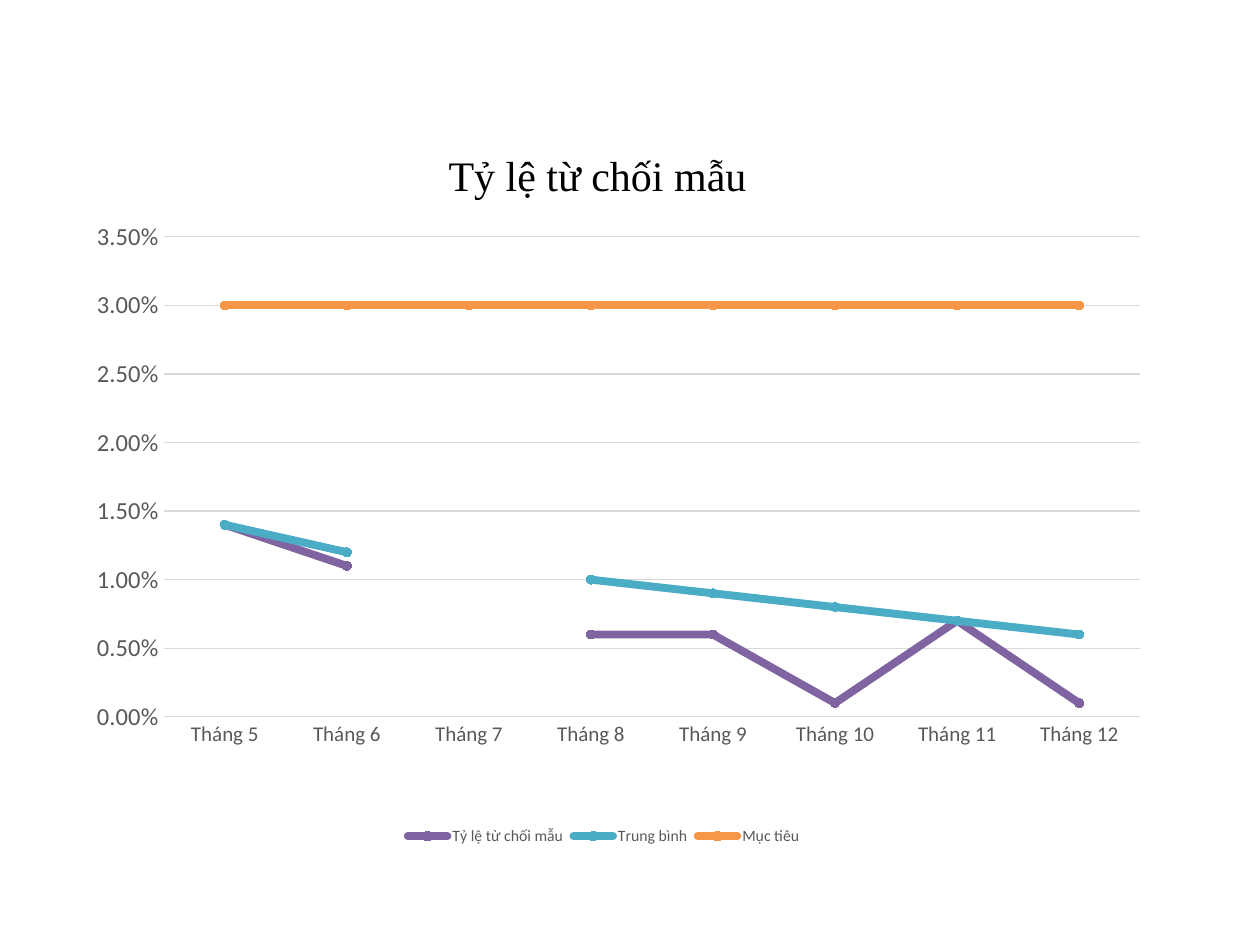
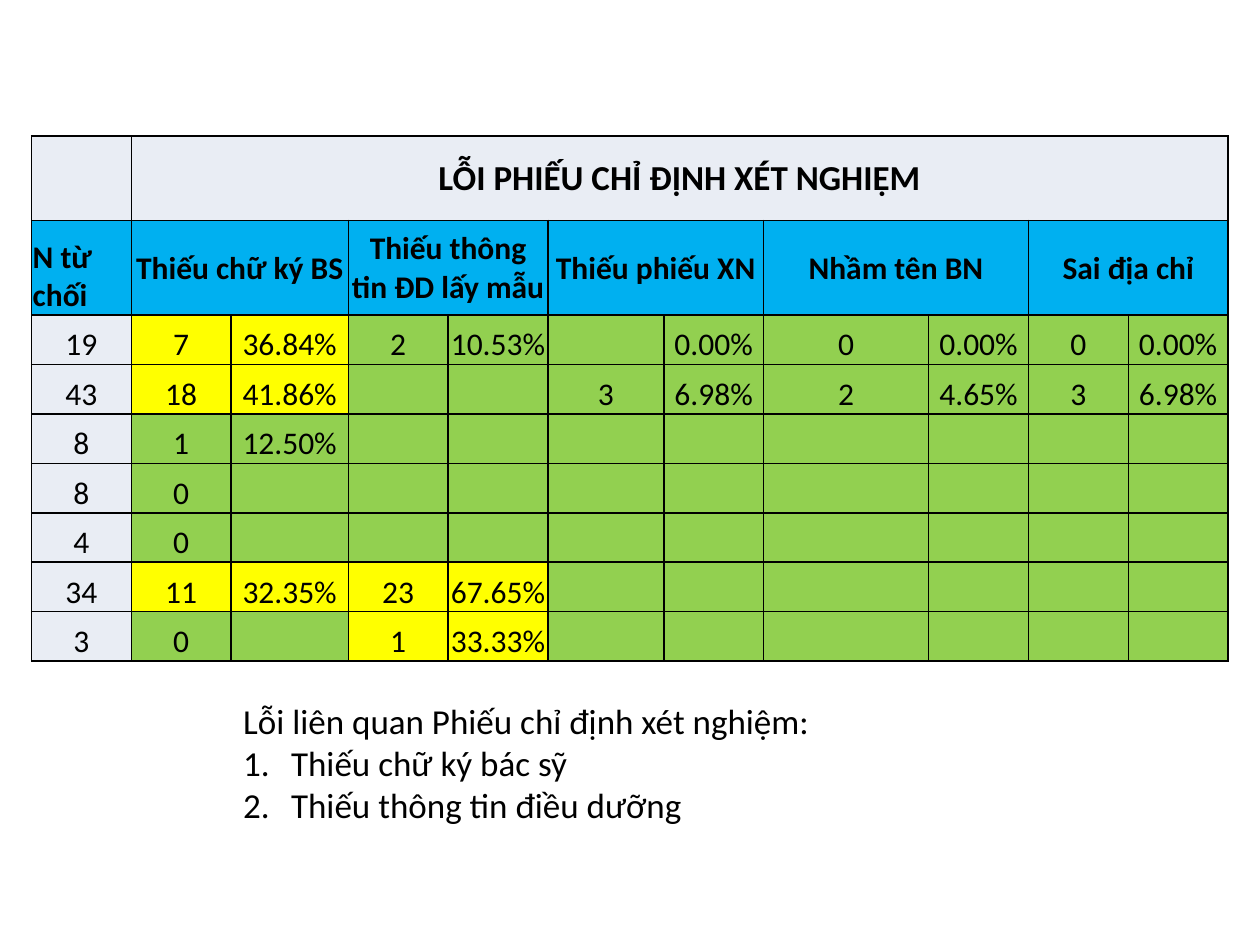
from dataclasses import dataclass
from typing import NamedTuple, Optional

from lxml.etree import SubElement
from pptx import Presentation
from pptx.chart.data import CategoryChartData
from pptx.dml.color import RGBColor
from pptx.enum.chart import XL_CHART_TYPE, XL_LEGEND_POSITION, XL_MARKER_STYLE, XL_TICK_MARK
from pptx.enum.text import MSO_ANCHOR, MSO_AUTO_SIZE, PP_ALIGN
from pptx.oxml.ns import qn
from pptx.util import Inches, Pt

LINE_MARKERS = XL_CHART_TYPE.LINE_MARKERS
LEGEND_BOTTOM = XL_LEGEND_POSITION.BOTTOM
CIRCLE = XL_MARKER_STYLE.CIRCLE
NO_TICK = XL_TICK_MARK.NONE
TOP, MIDDLE, BOTTOM = MSO_ANCHOR.TOP, MSO_ANCHOR.MIDDLE, MSO_ANCHOR.BOTTOM
LEFT, CENTER = PP_ALIGN.LEFT, PP_ALIGN.CENTER
NO_AUTOFIT = MSO_AUTO_SIZE.NONE
BODY_LAYOUT, BLANK_LAYOUT = 1, 6


@dataclass(frozen=True)
class Theme:
    font: str = "Calibri"
    title_font: str = "Times New Roman"
    text: str = "000000"
    muted: str = "595959"
    grid: str = "D9D9D9"
    pale: str = "E9EDF4"
    header: str = "00B0F0"
    normal: str = "92D050"
    alert: str = "FFFF00"
    chart_title_size: int = 24
    heading_size: int = 20
    table_size: int = 18
    value_size: int = 14
    category_size: int = 12
    chart_size: int = 10
    legend_size: int = 9


THEME = Theme()


class RateLine(NamedTuple):
    name: str
    values: list[Optional[float]]
    color: str


class ErrorCount(NamedTuple):
    count: str = ""
    share: str = ""


class RejectedRow(NamedTuple):
    total: int
    errors: list[ErrorCount]


# Rejection rate by month
CHART_WIDTH, CHART_HEIGHT = 8.92, 5.75
MONTHS = [f"Tháng {month}" for month in range(5, 13)]
RATE_TITLE = "Tỷ lệ từ chối mẫu"
RATE_LINES = [
    RateLine(RATE_TITLE, [0.014, 0.011, None, 0.006, 0.006, 0.001, 0.007, 0.001], "8064A2"),
    RateLine("Trung bình", [0.014, 0.012, None, 0.01, 0.009, 0.008, 0.007, 0.006], "4BACC6"),
    RateLine("Mục tiêu", [0.03] * len(MONTHS), "F79646"),
]

# Request form errors; each kind takes a count column and a share column
ERROR_TITLE = "LỖI PHIẾU CHỈ ĐỊNH XÉT NGHIỆM"
ERROR_KINDS = ["Thiếu chữ ký BS", "Thiếu thông tin ĐD lấy mẫu", "Thiếu phiếu XN",
               "Nhầm tên BN", "Sai địa chỉ"]
ALERT_SHARE = 0.3
NONE_FOUND = ErrorCount("0", "0.00%")
REJECTED_ROWS = [
    RejectedRow(19, [ErrorCount("7", "36.84%"), ErrorCount("2", "10.53%"),
                     ErrorCount("", "0.00%"), NONE_FOUND, NONE_FOUND]),
    RejectedRow(43, [ErrorCount("18", "41.86%"), ErrorCount(), ErrorCount("3", "6.98%"),
                     ErrorCount("2", "4.65%"), ErrorCount("3", "6.98%")]),
    RejectedRow(8, [ErrorCount("1", "12.50%")]),
    RejectedRow(8, [ErrorCount("0")]),
    RejectedRow(4, [ErrorCount("0")]),
    RejectedRow(34, [ErrorCount("11", "32.35%"), ErrorCount("23", "67.65%")]),
    RejectedRow(3, [ErrorCount("0"), ErrorCount("1", "33.33%")]),
]
COLUMN_COUNT = 1 + 2 * len(ERROR_KINDS)
TABLE_WIDTH, TABLE_HEIGHT = 9.5, 4.17
WIDE_COLUMNS = {2: 0.93, 5: 0.92, 7: 1.31}
HEADER_HEIGHTS = [0.67, 0.75]

LIST_HEADING = "Lỗi liên quan Phiếu chỉ định xét nghiệm:"
LIST_ITEMS = ["Thiếu chữ ký bác sỹ", "Thiếu thông tin điều dưỡng"]


def rgb(color: str) -> RGBColor:
    return RGBColor.from_string(color)


def set_font(font, size: int, color: str = THEME.text, bold: bool = False,
             name: str = THEME.font) -> None:
    font.name, font.size, font.bold = name, Pt(size), bold
    font.color.rgb = rgb(color)


def set_line(line, color: str, width: float) -> None:
    line.color.rgb = rgb(color)
    line.width = Pt(width)


def place(parent, left: float, top: float, size: Optional[tuple[float, float]] = None) -> None:
    """Place a chart part, in inches from the corner of the chart."""
    for old in parent.findall(qn("c:layout")):
        parent.remove(old)
    layout = SubElement(parent, qn("c:layout"))
    manual = SubElement(layout, qn("c:manualLayout"))
    settings = {"xMode": "edge", "yMode": "edge",
                "x": left / CHART_WIDTH, "y": top / CHART_HEIGHT}
    if size:
        width, height = size
        settings = {"layoutTarget": "inner", **settings,
                    "w": width / CHART_WIDTH, "h": height / CHART_HEIGHT}
    for tag, value in settings.items():
        SubElement(manual, qn(f"c:{tag}")).set("val", str(value))
    # The layout follows the title text, or opens the plot area
    text = parent.find(qn("c:tx"))
    parent.insert(0 if text is None else 1, layout)


def style_axes(chart) -> None:
    months, rates = chart.category_axis, chart.value_axis
    for axis, size in ((months, THEME.category_size), (rates, THEME.value_size)):
        axis.major_tick_mark = axis.minor_tick_mark = NO_TICK
        set_font(axis.tick_labels.font, size, THEME.muted)
    set_line(months.format.line, THEME.grid, 0.75)
    rates.format.line.fill.background()
    rates.has_major_gridlines = True
    set_line(rates.major_gridlines.format.line, THEME.grid, 0.75)
    rates.minimum_scale, rates.maximum_scale, rates.major_unit = 0, 0.035, 0.005
    rates.tick_labels.number_format = "0.00%"
    rates.tick_labels.number_format_is_linked = False


def add_rate_chart(page) -> None:
    data = CategoryChartData(number_format="0.00%")
    data.categories = MONTHS
    for rate in RATE_LINES:
        data.add_series(rate.name, rate.values)
    chart = page.shapes.add_chart(LINE_MARKERS, Inches(0.33), Inches(1),
                                  Inches(CHART_WIDTH), Inches(CHART_HEIGHT), data).chart
    set_font(chart.font, THEME.chart_size)
    style_axes(chart)

    # Title, plot area and legend
    chart.has_title = True
    title = chart.chart_title
    title.text_frame.text = RATE_TITLE
    set_font(title.text_frame.paragraphs[0].font, THEME.chart_title_size,
             name=THEME.title_font)
    title.include_in_layout = False
    place(title._element, 3.17, 0.12)
    place(chart._chartSpace.find(".//" + qn("c:plotArea")), 0.97, 0.88, (7.75, 3.81))
    chart.has_legend = True
    chart.legend.position = LEGEND_BOTTOM
    chart.legend.include_in_layout = False
    set_font(chart.legend.font, THEME.legend_size, THEME.muted)

    # Lines and markers
    chart.plots[0].vary_by_categories = False
    for series, rate in zip(chart.plots[0].series, RATE_LINES):
        series.smooth = False
        set_line(series.format.line, rate.color, 4.5)
        series._element.find(".//" + qn("a:ln")).set("cap", "rnd")
        series.marker.style, series.marker.size = CIRCLE, 5
        series.marker.format.fill.solid()
        series.marker.format.fill.fore_color.rgb = rgb(rate.color)
        set_line(series.marker.format.line, rate.color, 0.75)


def add_borders(cell) -> None:
    properties = cell._tc.get_or_add_tcPr()
    for side in ("lnL", "lnR", "lnT", "lnB"):
        line = SubElement(properties, qn(f"a:{side}"), w=str(Pt(1)))
        fill = SubElement(line, qn("a:solidFill"))
        SubElement(fill, qn("a:srgbClr"), val=THEME.text)


def fill_cell(cell, text: str, color: str, size: int = THEME.table_size, bold: bool = False,
              anchor: MSO_ANCHOR = BOTTOM, align: PP_ALIGN = CENTER) -> None:
    cell.fill.solid()
    cell.fill.fore_color.rgb = rgb(color)
    cell.margin_left = cell.margin_right = cell.margin_top = Inches(0.01)
    cell.margin_bottom = 0
    cell.vertical_anchor = anchor
    cell.text = text
    para = cell.text_frame.paragraphs[0]
    para.alignment = align
    set_font(para.font, size, bold=bold)


def add_error_table(page) -> None:
    row_count = len(HEADER_HEIGHTS) + len(REJECTED_ROWS)
    table = page.shapes.add_table(row_count, COLUMN_COUNT, Inches(0.25), Inches(1.08),
                                  Inches(TABLE_WIDTH), Inches(TABLE_HEIGHT)).table
    table.first_row = table.horz_banding = False
    narrow = (TABLE_WIDTH - sum(WIDE_COLUMNS.values())) / (COLUMN_COUNT - len(WIDE_COLUMNS))
    for index, column in enumerate(table.columns):
        column.width = Inches(WIDE_COLUMNS.get(index, narrow))
    body_height = (TABLE_HEIGHT - sum(HEADER_HEIGHTS)) / len(REJECTED_ROWS)
    heights = HEADER_HEIGHTS + [body_height] * len(REJECTED_ROWS)
    for row, height in zip(table.rows, heights):
        row.height = Inches(height)
    for cell in table.iter_cells():
        add_borders(cell)

    # Headers
    fill_cell(table.cell(0, 0), "", THEME.pale)
    table.cell(0, 1).merge(table.cell(0, COLUMN_COUNT - 1))
    fill_cell(table.cell(0, 1), ERROR_TITLE, THEME.pale, THEME.heading_size, True, MIDDLE)
    fill_cell(table.cell(1, 0), "N từ chối", THEME.header, bold=True, align=LEFT)
    for kind, label in enumerate(ERROR_KINDS):
        first = 1 + 2 * kind
        table.cell(1, first).merge(table.cell(1, first + 1))
        fill_cell(table.cell(1, first), label, THEME.header, bold=True, anchor=MIDDLE)

    # Counts and shares, with large shares highlighted
    for row, rejected in enumerate(REJECTED_ROWS, start=len(HEADER_HEIGHTS)):
        fill_cell(table.cell(row, 0), str(rejected.total), THEME.pale)
        missing = len(ERROR_KINDS) - len(rejected.errors)
        for kind, error in enumerate(rejected.errors + [ErrorCount()] * missing):
            share = int(error.count or 0) / rejected.total
            color = THEME.alert if share > ALERT_SHARE else THEME.normal
            for offset, text in enumerate(error):
                fill_cell(table.cell(row, 1 + 2 * kind + offset), text, color)


def add_error_list(page) -> None:
    box = page.placeholders[1]
    box.left, box.top, box.width, box.height = map(Inches, (1.83, 5.5, 5.67, 1.11))
    frame = box.text_frame
    frame.word_wrap, frame.auto_size, frame.vertical_anchor = True, NO_AUTOFIT, TOP
    frame.text = "\n".join([LIST_HEADING, *LIST_ITEMS])
    for index, para in enumerate(frame.paragraphs):
        properties = para._p.get_or_add_pPr()
        indent = Inches(0.38) if index else 0
        properties.set("marL", str(indent))
        properties.set("indent", str(-indent))
        if index:
            SubElement(properties, qn("a:buFont"), typeface="+mj-lt")
            SubElement(properties, qn("a:buAutoNum"), type="arabicPeriod")
        else:
            SubElement(properties, qn("a:buNone"))
        para.alignment, para.space_before = LEFT, Pt(0)
        set_font(para.font, THEME.heading_size)


def main() -> None:
    deck = Presentation()
    deck.slide_width, deck.slide_height = Inches(10), Inches(7.5)

    # Slide 1: rejection rate chart
    add_rate_chart(deck.slides.add_slide(deck.slide_layouts[BLANK_LAYOUT]))

    # Slide 2: error table and list
    page = deck.slides.add_slide(deck.slide_layouts[BODY_LAYOUT])
    title = page.shapes.title._element
    title.getparent().remove(title)
    add_error_table(page)
    add_error_list(page)

    deck.save("out.pptx")


if __name__ == "__main__":
    main()
